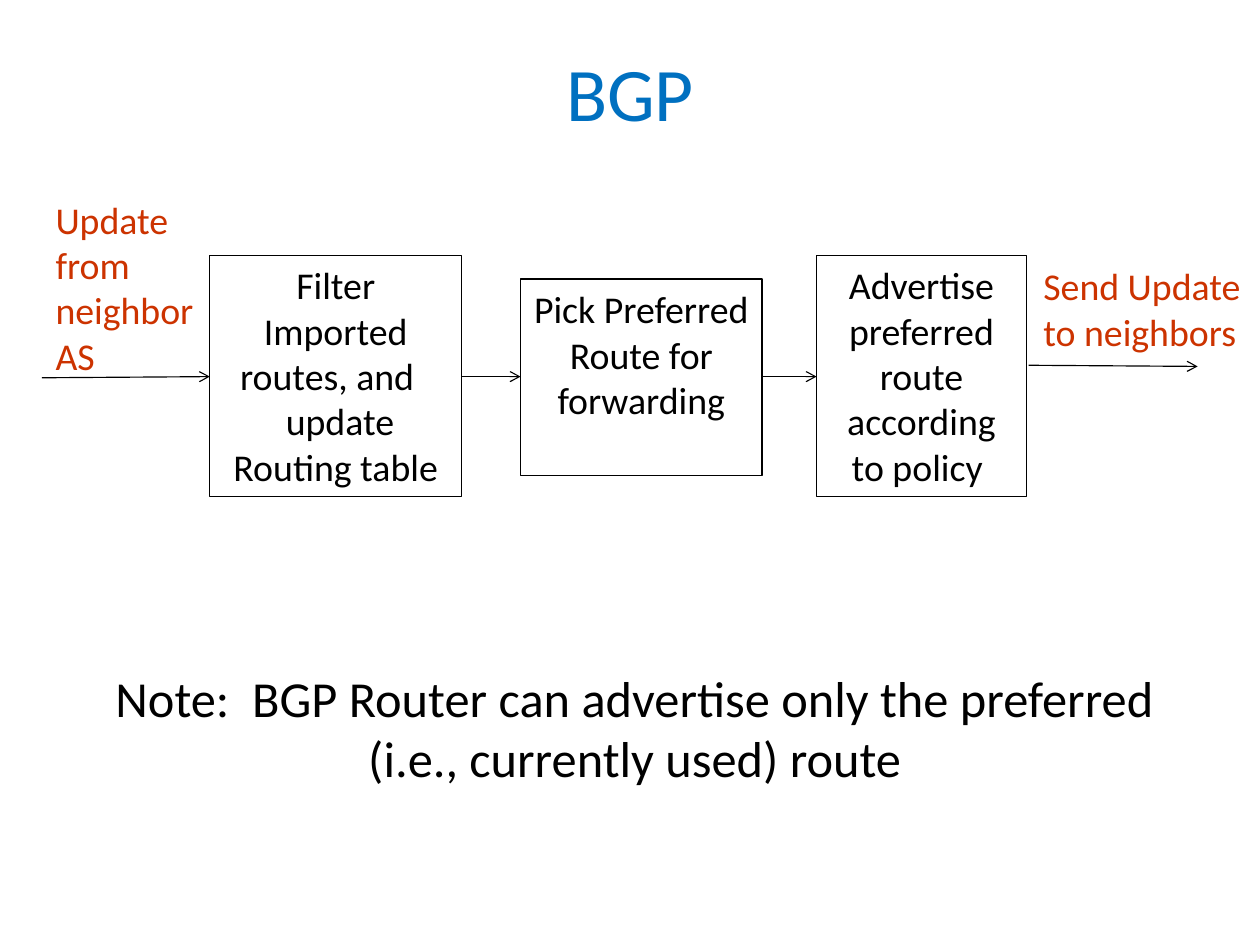
from lxml import etree
from pptx import Presentation
from pptx.dml.color import RGBColor
from pptx.enum import shapes, text
from pptx.oxml import ns
from pptx.util import Inches, Pt

COLORS = {"title": "0070C0", "ink": "000000", "update": "CC3300", "paper": "FFFFFF"}
FONT = "Calibri"
LEFT, CENTER = text.PP_ALIGN.LEFT, text.PP_ALIGN.CENTER
TOP, MIDDLE = text.MSO_ANCHOR.TOP, text.MSO_ANCHOR.MIDDLE

STEPS = [
    (1.85, 2.25, 2.22, 2.13, "Filter Imported routes, and  \n update Routing table"),
    (4.59, 2.46, 2.13, 1.73, "Pick Preferred Route for forwarding"),
    (7.2, 2.25, 1.85, 2.13, "Advertise preferred route according to policy "),
]
ARROWS = [
    (0.37, 3.33, 1.85, 3.32),
    (4.07, 3.32, 4.59, 3.32),
    (6.72, 3.32, 7.2, 3.32),
    (9.07, 3.22, 10.56, 3.23),
]


def color(name):
    return RGBColor.from_string(COLORS[name])


def write(shape, words, size, ink, align=CENTER, anchor=TOP, pad=(0.11, 0.06)):
    frame = shape.text_frame
    frame.text = words
    frame.word_wrap = True
    frame.vertical_anchor = anchor
    frame.margin_left = frame.margin_right = Inches(pad[0])
    frame.margin_top = frame.margin_bottom = Inches(pad[1])
    for para in frame.paragraphs:
        para.alignment = align
        for run in para.runs:
            run.font.name = FONT
            run.font.size = Pt(size)
            run.font.color.rgb = color(ink)


def add_label(slide, left, top, width, height, words, size, ink, **style):
    label = slide.shapes.add_textbox(
        Inches(left), Inches(top), Inches(width), Inches(height))
    write(label, words, size, ink, **style)
    return label


def add_step(slide, left, top, width, height, words):
    step = slide.shapes.add_shape(
        shapes.MSO_SHAPE.RECTANGLE,
        Inches(left), Inches(top), Inches(width), Inches(height))
    step.shadow.inherit = False
    step.fill.solid()
    step.fill.fore_color.rgb = color("paper")
    step.line.color.rgb = color("ink")
    step.line.width = Pt(0.75)
    write(step, words, 24, "ink")


def add_arrow(slide, *ends):
    arrow = slide.shapes.add_connector(
        shapes.MSO_CONNECTOR.STRAIGHT, *[Inches(end) for end in ends])
    arrow.line.color.rgb = color("ink")
    arrow.line.width = Pt(0.75)
    etree.SubElement(arrow.line._get_or_add_ln(), ns.qn("a:tailEnd"), type="arrow")
    etree.SubElement(arrow._element.spPr, ns.qn("a:effectLst"))


def add_shadow(label):
    for run in label.text_frame.paragraphs[0].runs:
        effect = etree.Element(ns.qn("a:effectLst"))
        shade = etree.SubElement(
            effect, ns.qn("a:outerShdw"), blurRad="38100", dist="38100",
            dir="2700000", algn="tl")
        tint = etree.SubElement(shade, ns.qn("a:srgbClr"), val=COLORS["ink"])
        etree.SubElement(tint, ns.qn("a:alpha"), val="43000")
        run._r.rPr.find(ns.qn("a:solidFill")).addnext(effect)


def main():
    deck = Presentation()
    deck.slide_width, deck.slide_height = Inches(11.11), Inches(8.33)
    slide = deck.slides.add_slide(deck.slide_layouts[6])
    add_label(slide, 0, 0.11, 11.11, 1.39, "BGP", 48, "title", anchor=MIDDLE)
    for step in STEPS:
        add_step(slide, *step)
    add_label(slide, 0.38, 1.67, 1.76, 1.73,
              "Update from neighbor AS", 24, "update", align=LEFT)
    add_label(slide, 9.09, 2.26, 2.13, 0.94,
              "Send Update to neighbors", 24, "update", align=LEFT)
    for arrow in ARROWS:
        add_arrow(slide, *arrow)
    note = add_label(
        slide, 0.81, 5.83, 9.58, 1.18,
        "Note:  BGP Router can advertise only the preferred (i.e., currently used) route",
        32, "ink", pad=(0.1, 0.05))
    add_shadow(note)
    deck.save("out.pptx")


if __name__ == "__main__":
    main()
